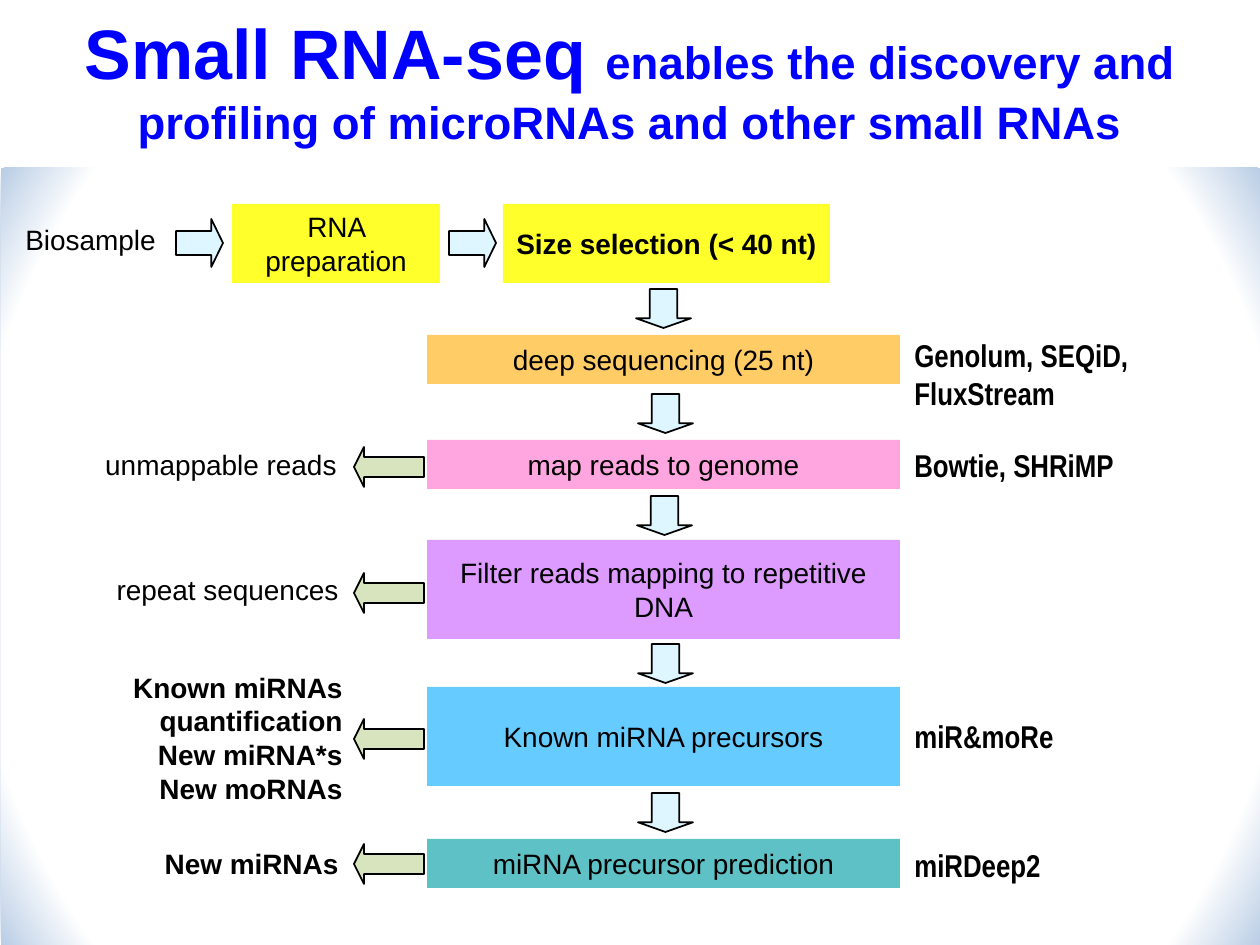
import pptx
import pptx.util
import pptx.dml.color
import pptx.enum.shapes
import pptx.enum.text
import pptx.oxml
import pptx.oxml.ns
from dataclasses import dataclass

PX = 914400 / 126
MSO = pptx.enum.shapes.MSO_SHAPE
ALIGN = pptx.enum.text.PP_ALIGN
ANCHOR = pptx.enum.text.MSO_ANCHOR
RGB = pptx.dml.color.RGBColor.from_string


@dataclass
class Theme:
    title: str = "0000FF"
    text: str = "000000"
    yellow: str = "FFFF00"
    step_arrow: str = "DDF6FF"
    output_arrow: str = "D7E4BD"
    glow: str = "B9CDE5"
    font: str = "Arial"
    tool_font: str = "Arial Narrow"
    title_size: int = 40
    subtitle_size: int = 26
    body_size: int = 16
    tool_size: int = 18


theme = Theme()
prs = pptx.Presentation()
prs.slide_width, prs.slide_height = pptx.util.Inches(10), pptx.util.Inches(7.5)
slide = prs.slides.add_slide(prs.slide_layouts[6])


def add_shape(kind, box, color, alpha=100, rotation=0):
    s = slide.shapes.add_shape(kind, *[round(v * PX) for v in box])
    s.shadow.inherit = False
    s.fill.solid()
    s.fill.fore_color.rgb = RGB(color)
    if alpha < 100:
        clr = s.fill._xPr.find(".//" + pptx.oxml.ns.qn("a:srgbClr"))
        clr.append(pptx.oxml.parse_xml(
            f'<a:alpha {pptx.oxml.ns.nsdecls("a")} val="{alpha * 1000}"/>'))
    if kind == MSO.LEFT_ARROW:
        s.adjustments[0], s.adjustments[1] = 0.5, 0.25
        s.line.color.rgb = RGB(theme.text)
        s.line.width = pptx.util.Pt(1)
        s.rotation = rotation
    else:
        s.line.fill.background()
    return s


def add_text(target, text, align, bold=False, wrap=True, anchor=ANCHOR.MIDDLE,
             font=theme.font, size=theme.body_size):
    """Write into a shape, or into a new text box when target is a box."""
    if isinstance(target, tuple):
        target = slide.shapes.add_textbox(*[round(v * PX) for v in target])
    tf = target.text_frame
    tf.text = text
    tf.word_wrap = wrap
    tf.vertical_anchor = anchor
    for p in tf.paragraphs:
        p.alignment = align
        for r in p.runs:
            r.font.name, r.font.size, r.font.bold = font, pptx.util.Pt(size), bold
            r.font.color.rgb = RGB(theme.text)
    return tf


# Title
tf = add_text((0, 3, 1260, 152), "Small RNA-seq ", ALIGN.CENTER, bold=True,
              size=theme.title_size)
p = tf.paragraphs[0]
r = p.add_run()
r.text = "enables the discovery and profiling of microRNAs and other small RNAs"
r.font.name, r.font.bold = theme.font, True
r.font.size = pptx.util.Pt(theme.subtitle_size)
for r in p.runs:
    r.font.color.rgb = RGB(theme.title)

# Panel that is white in the middle and blue in the corners
s = add_shape(MSO.RECTANGLE, (1, 168, 1260, 779), "FFFFFF")
solid = s._element.spPr.find(pptx.oxml.ns.qn("a:solidFill"))
solid.getparent().replace(solid, pptx.oxml.parse_xml(
    f'<a:gradFill {pptx.oxml.ns.nsdecls("a")} rotWithShape="1"><a:gsLst>'
    '<a:gs pos="89000"><a:srgbClr val="FFFFFF"/></a:gs>'
    f'<a:gs pos="100000"><a:srgbClr val="{theme.glow}"/></a:gs></a:gsLst>'
    '<a:path path="circle"><a:fillToRect l="50000" t="50000" r="50000" b="50000"/>'
    '</a:path></a:gradFill>'))

# Sample preparation row
add_text((13, 216, 157, 47), "Biosample", ALIGN.LEFT, wrap=False)
for x, width, text, bold in [(232, 208, "RNA preparation", False),
                             (503, 327, "Size selection (< 40 nt)", True)]:
    s = add_shape(MSO.RECTANGLE, (x, 204, width, 79), theme.yellow, alpha=83)
    add_text(s, text, ALIGN.CENTER, bold)
for x in (176, 449):
    add_shape(MSO.LEFT_ARROW, (x, 219, 47, 48), theme.step_arrow, rotation=180)

# Pipeline steps: top, height, colour, opacity, text
steps = [
    (335, 49, "FFCC66", 100, "deep sequencing (25 nt)"),
    (440, 49, "FF6FCF", 61, "map reads to genome"),
    (540, 99, "CC66FF", 65, "Filter reads mapping to repetitive DNA"),
    (687, 99, "66CCFF", 100, "Known miRNA precursors"),
    (839, 49, "5EC1C6", 100, "miRNA precursor prediction"),
]
for top, height, color, alpha, text in steps:
    s = add_shape(MSO.RECTANGLE, (427, top, 473, height), color, alpha)
    add_text(s, text, ALIGN.CENTER)

# Downward arrows between the steps
for x, y in [(644, 281), (646, 386), (645, 488), (646, 636), (646, 785)]:
    add_shape(MSO.LEFT_ARROW, (x, y, 39, 55), theme.step_arrow, rotation=270)

# Outputs on the left: arrow top, label box, text, bold, wrap
outputs = [
    (447, (89, 441, 260, 47), "unmappable reads", False, False),
    (573, (100, 566, 251, 47), "repeat sequences", False, False),
    (719, (6, 663, 349, 149),
     "Known miRNAs quantification\nNew miRNA*s\nNew moRNAs", True, True),
    (844, (149, 840, 202, 47), "New miRNAs", True, False),
]
for top, box, text, bold, wrap in outputs:
    add_shape(MSO.LEFT_ARROW, (354, top, 70, 40), theme.output_arrow)
    add_text(box, text, ALIGN.RIGHT, bold, wrap)

# Tools on the right
for top, width, text in [(330, 358, "Genolum, SEQiD, FluxStream"),
                         (440, 227, "Bowtie, SHRiMP"),
                         (711, 166, "miR&moRe"),
                         (840, 152, "miRDeep2")]:
    add_text((902, top, width, 50), text, ALIGN.LEFT, bold=True, wrap=False,
             anchor=ANCHOR.TOP, font=theme.tool_font, size=theme.tool_size)

prs.save("out.pptx")
